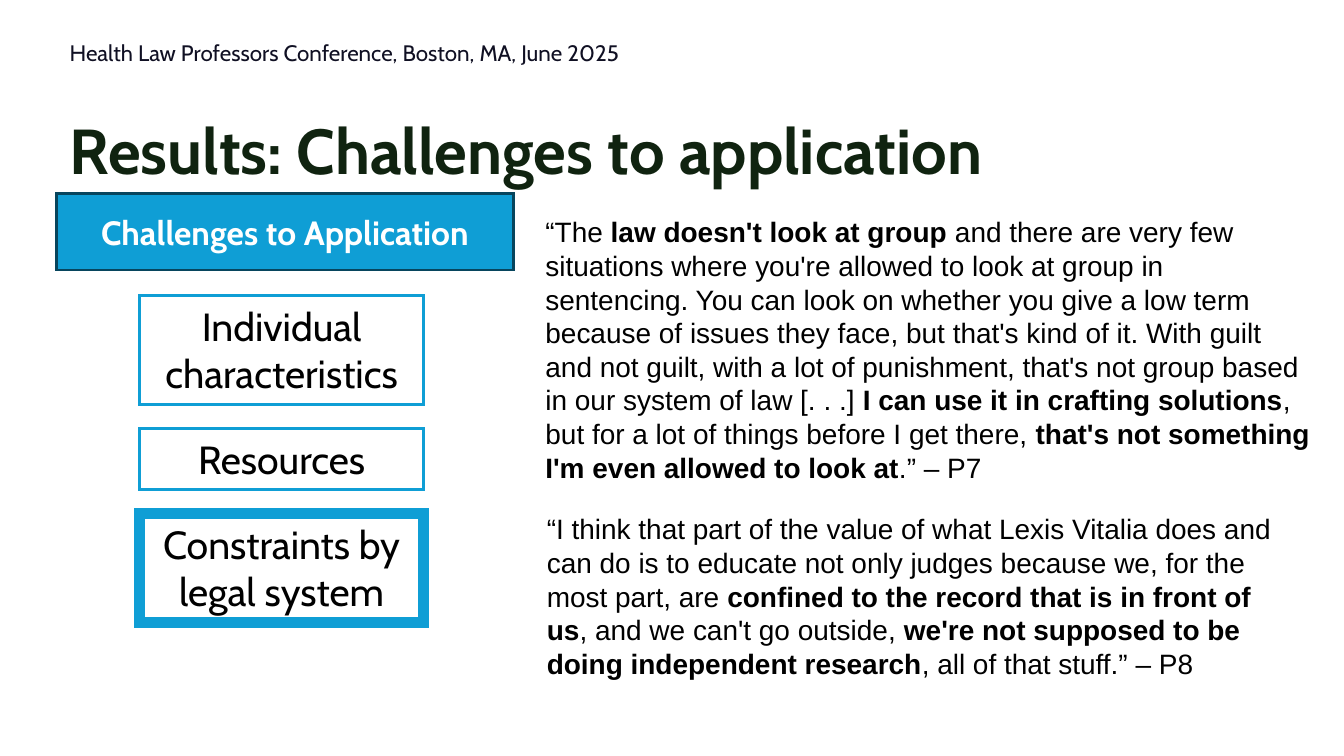
from lxml import etree
from pptx import Presentation
from pptx.dml.color import RGBColor
from pptx.enum.shapes import MSO_SHAPE
from pptx.enum.text import MSO_ANCHOR as Anchor, PP_ALIGN as Align
from pptx.oxml.ns import qn
from pptx.util import Inches, Pt

COLORS = {
    "title": "102310", "header": "101023", "text": "000000", "white": "FFFFFF",
    "blue": "0F9ED5", "navy": "07455D",
}

# Content: runs are (text, bold)
HEADER = "Health Law Professors Conference, Boston, MA, June 2025"
TITLE = "Results: Challenges to application"
BANNER = "Challenges to Application"
CHALLENGES = [  # text, height, line width
    ("Individual characteristics", 0.81, 1.5),
    ("Resources", 0.45, 1.5),
    ("Constraints by legal system", 0.81, 6),
]
QUOTES = [  # left, top, width, height, runs
    (3.96, 1.55, 5.9, 2.12, [
        ("“The ", False),
        ("law doesn't look at group ", True),
        ("and there are very few situations where you're allowed to look at group in "
         "sentencing. You can look on whether you give a low term because of issues they "
         "face, but that's kind of it. With guilt and not guilt, with a lot of punishment, "
         "that's not group based in our system of law [. . .] ", False),
        ("I can use it in crafting solutions", True),
        (", but for a lot of things before I get there, ", False),
        ("that's not something I'm even allowed to look at", True),
        (".” – P7", False),
    ]),
    (3.97, 3.76, 5.68, 1.36, [
        ("“I think that part of the value of what Lexis Vitalia does and can do is to "
         "educate not only judges because we, for the most part, are ", False),
        ("confined to the record that is in front of us", True),
        (", and we can't go outside, ", False),
        ("we're not supposed to be doing independent research", True),
        (", all of that stuff.” – P8", False),
    ]),
]


def color(name):
    return RGBColor.from_string(COLORS[name])


def write(shape, runs, size, font, ink, align=Align.LEFT, anchor=Anchor.TOP, inset=0.05):
    frame = shape.text_frame
    frame.word_wrap = True
    frame.vertical_anchor = anchor
    frame.margin_left = frame.margin_right = Inches(0.1)
    frame.margin_top = frame.margin_bottom = Inches(inset)
    paragraph = frame.paragraphs[0]
    paragraph.alignment = align
    for text, bold in runs:
        run = paragraph.add_run()
        run.text = text
        run.font.name, run.font.size, run.font.bold = font, Pt(size), bold
        run.font.color.rgb = color(ink)
    return paragraph


def add_box(slide, place, fill, line, line_width):
    shape = slide.shapes.add_shape(MSO_SHAPE.RECTANGLE, *map(Inches, place))
    shape.shadow.inherit = False
    shape.fill.solid()
    shape.fill.fore_color.rgb = color(fill)
    shape.line.color.rgb = color(line)
    shape.line.width = Pt(line_width)
    # Square corners on the outline
    outline = shape.element.spPr.find(qn("a:ln"))
    etree.SubElement(outline, qn("a:miter"), lim="800000")
    return shape


# Widescreen slide, 16:9
presentation = Presentation()
presentation.slide_width = Inches(10)
presentation.slide_height = Inches(10 * 9 / 16)
slide = presentation.slides.add_slide(presentation.slide_layouts[5])

# Title
title = slide.shapes.title
title.left, title.top, title.width, title.height = map(Inches, (0.42, 0.77, 9.16, 0.72))
write(title, [(TITLE, True)], 34, "Cabin", "title", anchor=Anchor.BOTTOM, inset=0.1)

# Banner above the challenges
banner = add_box(slide, (0.42, 1.44, 3.4, 0.57), "blue", "navy", 1.5)
write(banner, [(BANNER, True)], 18, "Cabin", "white", Align.CENTER, Anchor.MIDDLE, 0.1)

# Stack of challenges with equal gaps
top, gap = 2.2, 0.18
for text, height, line_width in CHALLENGES:
    box = add_box(slide, (1.04, top, 2.11, height), "white", "blue", line_width)
    write(box, [(text, False)], 21, "Cabin", "text", Align.CENTER)
    top += height + gap

# Interview quotes
for *place, runs in QUOTES:
    quote = slide.shapes.add_textbox(*map(Inches, place))
    write(quote, runs, 15, "Arial", "text")

# Conference header
header = slide.shapes.add_textbox(*map(Inches, (0.42, 0.23, 4.58, 0.35)))
paragraph = write(header, [(HEADER, False)], 12, "Cabin", "header",
                  anchor=Anchor.MIDDLE, inset=0.1)
paragraph.line_spacing = 0.9
paragraph.space_after = Pt(12)

presentation.save("out.pptx")
